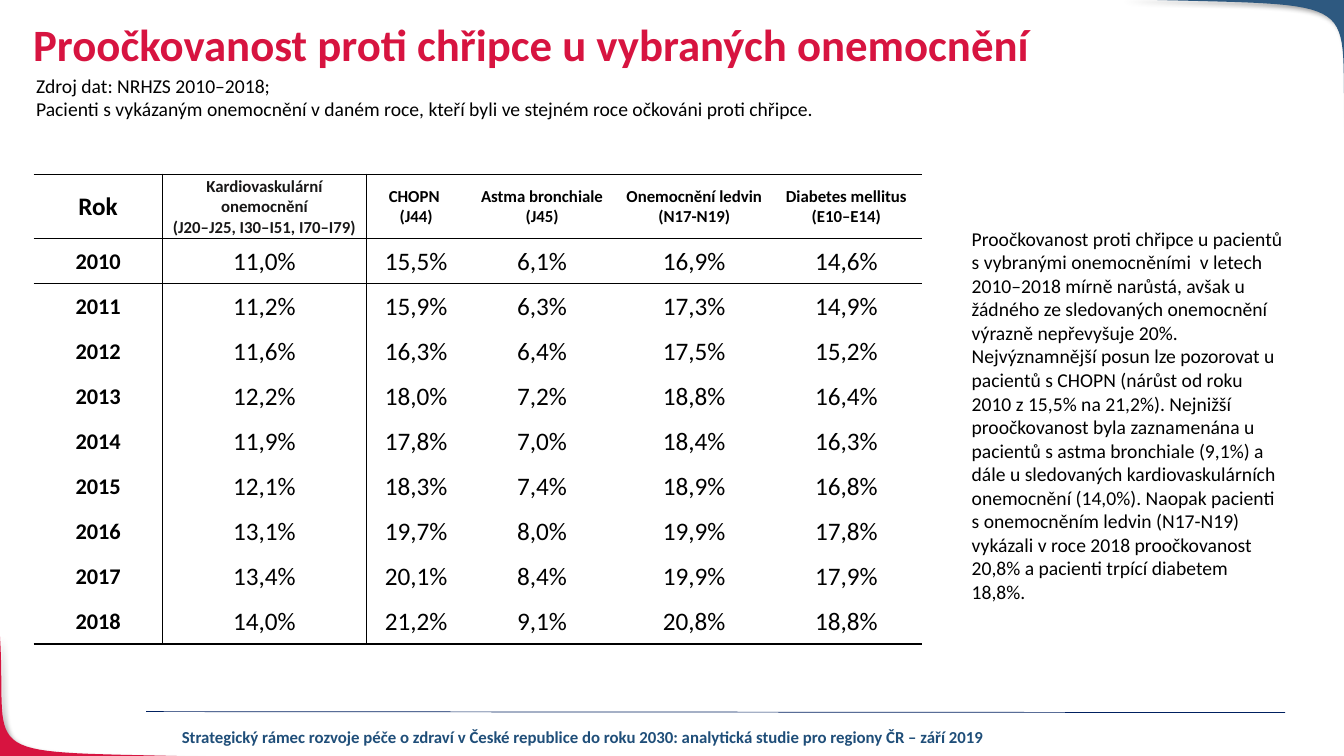
import copy

import lxml.etree
import pptx
import pptx.dml.color
import pptx.enum.shapes
import pptx.enum.text
import pptx.oxml
import pptx.oxml.ns
import pptx.util

Pt = pptx.util.Pt
qn = pptx.oxml.ns.qn
ALIGN = pptx.enum.text.PP_ALIGN
ANCHOR = pptx.enum.text.MSO_ANCHOR

# Content ("\n" starts a paragraph, "\v" breaks a line)
COLORS = {"red": "D71440", "blue": "2E5980", "footer": "1F4E79", "rule": "002060",
          "black": "000000", "dark": "181717"}
TITLE = "Proočkovanost proti chřipce u vybraných onemocnění"
DATA_SOURCE = ("Zdroj dat: NRHZS 2010–2018;\v"
               "Pacienti s vykázaným onemocnění v daném roce, kteří byli ve stejném roce "
               "očkováni proti chřipce.")
COMMENTARY = (
    "Proočkovanost proti chřipce u pacientů s vybranými onemocněními  v letech 2010–2018 "
    "mírně narůstá, avšak u žádného ze sledovaných onemocnění výrazně nepřevyšuje 20%. "
    "Nejvýznamnější posun lze pozorovat u pacientů s CHOPN (nárůst od roku 2010 z 15,5% "
    "na 21,2%). Nejnižší proočkovanost byla zaznamenána u pacientů s astma bronchiale "
    "(9,1%) a dále u sledovaných kardiovaskulárních onemocnění (14,0%). Naopak pacienti "
    "s onemocněním ledvin (N17-N19) vykázali v roce 2018 proočkovanost 20,8% a pacienti "
    "trpící diabetem 18,8%.")
FOOTER = ("Strategický rámec rozvoje péče o zdraví v České republice do roku 2030: "
          "analytická studie pro regiony ČR – září 2019")
HEADINGS = ["Rok", "Kardiovaskulární onemocnění\v(J20–J25, I30–I51, I70–I79)",
            "CHOPN \n(J44)", "Astma bronchiale\n(J45)", "Onemocnění ledvin\n(N17-N19)",
            "Diabetes mellitus (E10–E14)"]
COVERAGE = [
    ("2010", "11,0%", "15,5%", "6,1%", "16,9%", "14,6%"),
    ("2011", "11,2%", "15,9%", "6,3%", "17,3%", "14,9%"),
    ("2012", "11,6%", "16,3%", "6,4%", "17,5%", "15,2%"),
    ("2013", "12,2%", "18,0%", "7,2%", "18,8%", "16,4%"),
    ("2014", "11,9%", "17,8%", "7,0%", "18,4%", "16,3%"),
    ("2015", "12,1%", "18,3%", "7,4%", "18,9%", "16,8%"),
    ("2016", "13,1%", "19,7%", "8,0%", "19,9%", "17,8%"),
    ("2017", "13,4%", "20,1%", "8,4%", "19,9%", "17,9%"),
    ("2018", "14,0%", "21,2%", "9,1%", "20,8%", "18,8%"),
]
COLUMN_WIDTHS = [92.2, 145.4, 71.3, 108.7, 108.7, 108.7]
HEADING_HEIGHT, YEAR_HEIGHT = 46.1, 32.2
RULED_ROWS = {0, 1, 2, 10}  # row edges that carry a line, counted from the top
RULED_COLUMNS = {1, 2}      # column edges that carry a line, counted from the left

# Corner: colour, four points of the curve, outer corner point
CORNERS = [
    ("red", [(153.4, 540.7), (-24.5, 535.7), (5.8, 546.5), (0, 453.6)], (-0.7, 540.7)),
    ("blue", [(799.9, -0.7), (986.4, 5), (954.7, -7.2), (961.2, 102.2)], (961.2, -0.7)),
]


def rgb(name):
    return pptx.dml.color.RGBColor.from_string(COLORS[name])


def write(frame, text, size=14, color="black", bold=False, align=ALIGN.LEFT, spacing=None):
    for index, line in enumerate(text.split("\n")):
        paragraph = frame.paragraphs[0] if index == 0 else frame.add_paragraph()
        paragraph.text = line
        paragraph.alignment = align
        if spacing:
            paragraph.line_spacing = spacing
        for run in paragraph.runs:
            run.font.name = "Calibri"
            run.font.size = Pt(size)
            run.font.bold = bold
            run.font.color.rgb = rgb(color)
        # Line breaks take the same format as the text around them
        for line_break in paragraph._p.findall(qn("a:br")):
            line_break.append(copy.deepcopy(paragraph.runs[0]._r.rPr))


def add_text(left, top, width, height, text, wrap=True, **text_format):
    box = slide.shapes.add_textbox(Pt(left), Pt(top), Pt(width), Pt(height))
    box.text_frame.word_wrap = wrap
    write(box.text_frame, text, **text_format)


def curve_points(curve, steps=32):
    for step in range(steps + 1):
        t = step / steps
        weights = ((1 - t) ** 3, 3 * t * (1 - t) ** 2, 3 * t * t * (1 - t), t ** 3)
        yield tuple(Pt(sum(w * point[axis] for w, point in zip(weights, curve)))
                    for axis in (0, 1))


def add_corner(color, curve, tip):
    start, *rest = curve_points(curve)
    builder = slide.shapes.build_freeform(*start, scale=1.0)
    builder.add_line_segments(rest + [(Pt(tip[0]), Pt(tip[1]))], close=True)
    corner = builder.convert_to_shape()
    corner.fill.solid()
    corner.fill.fore_color.rgb = rgb(color)
    corner.line.fill.background()
    corner.shadow.inherit = False
    effects = corner._element.spPr.find(qn("a:effectLst"))
    shadow = lxml.etree.SubElement(effects, qn("a:outerShdw"), blurRad=str(Pt(4)),
                                   dist=str(Pt(3)), dir="2700000", rotWithShape="0")
    shade = lxml.etree.SubElement(shadow, qn("a:srgbClr"), val=COLORS["black"])
    lxml.etree.SubElement(shade, qn("a:alpha"), val="40000")


def set_borders(cell, row, column):
    ruled = [("a:lnL", column in RULED_COLUMNS), ("a:lnR", column + 1 in RULED_COLUMNS),
             ("a:lnT", row in RULED_ROWS), ("a:lnB", row + 1 in RULED_ROWS)]
    for position, (tag, visible) in enumerate(ruled):
        edge = pptx.oxml.xmlchemy.OxmlElement(tag)
        edge.set("w", str(Pt(1)))
        if visible:
            fill = lxml.etree.SubElement(edge, qn("a:solidFill"))
            lxml.etree.SubElement(fill, qn("a:srgbClr"), val=COLORS["black"])
        else:
            lxml.etree.SubElement(edge, qn("a:noFill"))
        cell._tc.get_or_add_tcPr().insert(position, edge)


def cell_format(row, column):
    if row == 0:
        return {"size": 12 if column else 18, "bold": True,
                "color": "dark" if column == 1 else "black"}
    return {"size": 18 if column else 16, "bold": column == 0}


presentation = pptx.Presentation()
presentation.slide_width, presentation.slide_height = Pt(960), Pt(540)
slide = presentation.slides.add_slide(presentation.slide_layouts[6])

# Corners and footer
for corner_parts in CORNERS:
    add_corner(*corner_parts)
footer_rule = slide.shapes.add_connector(pptx.enum.shapes.MSO_CONNECTOR.STRAIGHT,
                                         Pt(104.4), Pt(508.3), Pt(918), Pt(509))
footer_rule.line.color.rgb = rgb("rule")
footer_rule.line.width = Pt(0.5)
lxml.etree.SubElement(footer_rule._element.spPr, qn("a:effectLst"))
add_text(113, 515.5, 607, 21.8, FOOTER, size=12, color="footer", bold=True,
         align=ALIGN.CENTER)

# Heading and commentary
add_text(18.7, 49, 583, 75, DATA_SOURCE, wrap=False)
add_text(687, 158.4, 237.6, 328, COMMENTARY)
add_text(16.6, 13, 828, 49.7, TITLE, size=32, color="red", bold=True, spacing=0.9)

# Coverage table
rows = [HEADINGS, *COVERAGE]
table_height = HEADING_HEIGHT + YEAR_HEIGHT * len(COVERAGE)
coverage_table = slide.shapes.add_table(
    len(rows), len(HEADINGS), Pt(24), Pt(124.4), Pt(sum(COLUMN_WIDTHS)),
    Pt(table_height)).table
coverage_table.first_row = coverage_table.horz_banding = False
for column, width in enumerate(COLUMN_WIDTHS):
    coverage_table.columns[column].width = Pt(width)
for row, texts in enumerate(rows):
    coverage_table.rows[row].height = Pt(YEAR_HEIGHT if row else HEADING_HEIGHT)
    for column, text in enumerate(texts):
        cell = coverage_table.cell(row, column)
        cell.margin_left = cell.margin_right = cell.margin_top = Pt(0.7)
        cell.margin_bottom = 0
        cell.vertical_anchor = ANCHOR.MIDDLE
        cell.fill.background()
        set_borders(cell, row, column)
        write(cell.text_frame, text, align=ALIGN.CENTER, **cell_format(row, column))

presentation.save("out.pptx")
